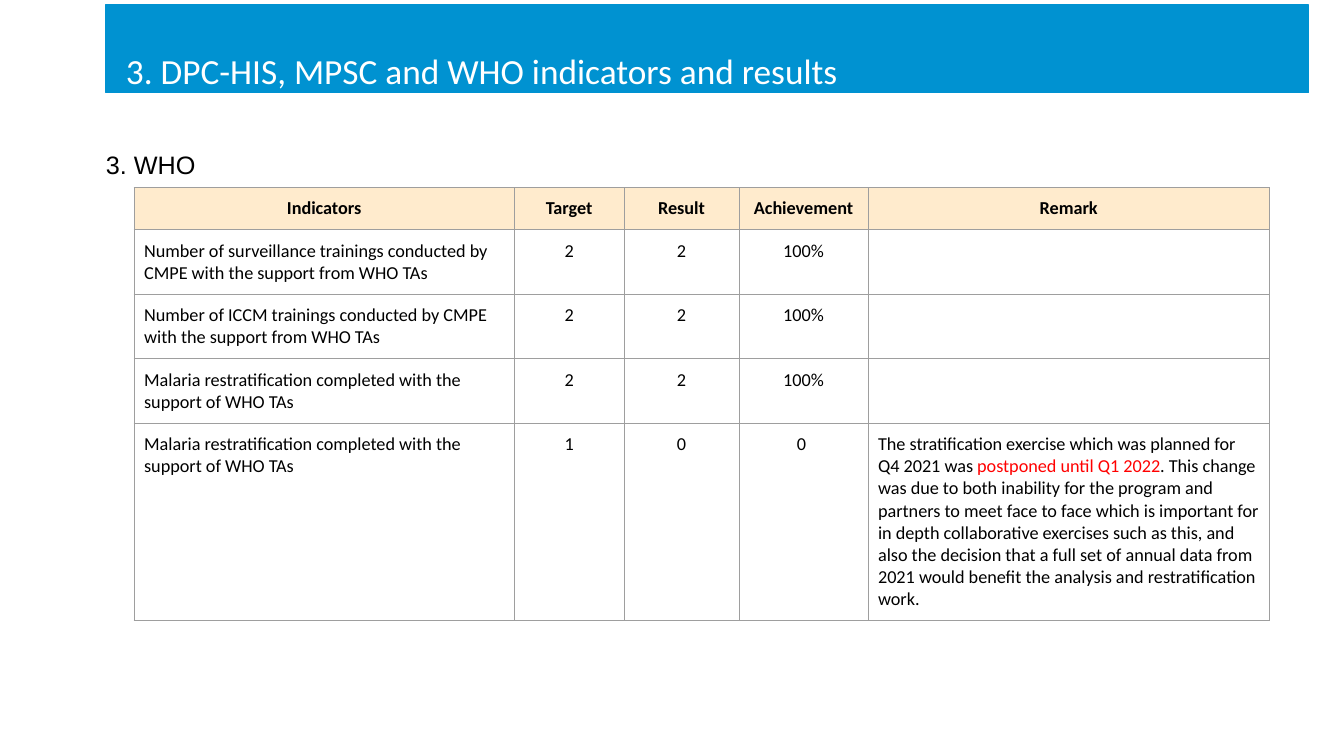
from lxml.etree import SubElement as Sub
from pptx import Presentation as Deck
from pptx.dml.color import RGBColor as RGB
from pptx.enum.shapes import MSO_SHAPE as Kind
from pptx.enum.text import MSO_ANCHOR as Anchor, PP_ALIGN as Align
from pptx.oxml.ns import qn
from pptx.util import Inches, Pt

COLORS = {
    "blue": "0092D1",
    "cream": "FFEBCD",
    "gray": "9E9E9E",
    "red": "FF0000",
    "black": "000000",
    "white": "FFFFFF",
}
WIDTHS = [3.77, 1.09, 1.14, 1.28, 3.98]
HEIGHTS = [0.42, 0.64, 0.64, 0.64, 1.96]
STRAT = "Malaria restratification completed with the support of WHO TAs"
REMARK = [
    ("The stratification exercise which was planned for Q4 2021 was ", "black"),
    ("postponed until Q1 2022", "red"),
    (". This change was due to both inability for the program and partners "
     "to meet face to face which is important for in depth collaborative "
     "exercises such as this, and also the decision that a full set of annual "
     "data from 2021 would benefit the analysis and restratification work.",
     "black"),
]
ROWS = [
    ["Indicators", "Target", "Result", "Achievement", "Remark"],
    ["Number of surveillance trainings conducted by CMPE with the support "
     "from WHO TAs", "2", "2", "100%", ""],
    ["Number of ICCM trainings conducted by CMPE with the support from WHO TAs",
     "2", "2", "100%", ""],
    [STRAT, "2", "2", "100%", ""],
    [STRAT, "1", "0", "0 ", REMARK],
]


class Page:
    def __init__(self, slide, font="Calibri"):
        self.slide = slide
        self.font = font

    def color(self, name):
        return RGB.from_string(COLORS[name])

    def style(self, run, size, color, font=None, bold=False):
        run.font.name = font or self.font
        run.font.size = Pt(size)
        run.font.bold = bold
        run.font.color.rgb = self.color(color)

    def words(self, frame, text, size, color, space, left=0, font=None):
        frame.word_wrap = True
        frame.margin_left = Inches(left)
        frame.margin_top = frame.margin_right = frame.margin_bottom = 0
        frame.text = text
        para = frame.paragraphs[0]
        para.alignment = Align.LEFT
        para.line_spacing = space
        self.style(para.runs[0], size, color, font)

    def label(self, text, box):
        shape = self.slide.shapes.add_textbox(*map(Inches, box))
        self.words(shape.text_frame, text, 18, "black", 1.3, font="Arial")

    def banner(self, text, box):
        shape = self.slide.shapes.add_shape(Kind.RECTANGLE, *map(Inches, box))
        shape.shadow.inherit = False
        shape.fill.solid()
        shape.fill.fore_color.rgb = self.color("blue")
        shape.line.color.rgb = self.color("blue")
        shape.line.width = Pt(0.75)
        shape.text_frame.vertical_anchor = Anchor.MIDDLE
        self.words(shape.text_frame, text, 25.2, "white", 2, left=0.2)

    def border(self, cell):
        props = cell._tc.get_or_add_tcPr()
        for spot, side in enumerate(["lnL", "lnR", "lnT", "lnB"]):
            line = Sub(props, qn("a:" + side), w=str(Pt(0.75)))
            fill = Sub(line, qn("a:solidFill"))
            Sub(fill, qn("a:srgbClr"), val=COLORS["gray"])
            props.insert(spot, line)

    def cell(self, cell, text, head, center):
        cell.margin_left = cell.margin_right = Inches(0.1)
        cell.margin_top = cell.margin_bottom = Inches(0.1)
        if head:
            cell.fill.solid()
            cell.fill.fore_color.rgb = self.color("cream")
        else:
            cell.fill.background()
        self.border(cell)
        if not text:
            return
        parts = [(text, "black")] if isinstance(text, str) else text
        para = cell.text_frame.paragraphs[0]
        para.alignment = Align.CENTER if center else Align.LEFT
        for words, color in parts:
            run = para.add_run()
            run.text = words
            self.style(run, 13, color, bold=head)

    def table(self, rows, left, top):
        box = map(Inches, (left, top, sum(WIDTHS), sum(HEIGHTS)))
        grid = self.slide.shapes.add_table(len(rows), len(WIDTHS), *box).table
        grid.horz_banding = False
        for col, width in zip(grid.columns, WIDTHS):
            col.width = Inches(width)
        for row, height in zip(grid.rows, HEIGHTS):
            row.height = Inches(height)
        for r, row in enumerate(rows):
            for c, text in enumerate(row):
                head = r == 0
                self.cell(grid.cell(r, c), text, head, head or 0 < c < 4)


def main():
    deck = Deck()
    deck.slide_width = Inches(13.33)
    deck.slide_height = Inches(7.5)
    page = Page(deck.slides.add_slide(deck.slide_layouts[6]))
    page.label("3. WHO", (1.05, 1.39, 11.93, 5.43))
    page.banner("3. DPC-HIS, MPSC and WHO indicators and results",
                (1.05, 0.05, 11.93, 0.87))
    page.table(ROWS, 1.33, 1.86)
    deck.save("out.pptx")


if __name__ == "__main__":
    main()
